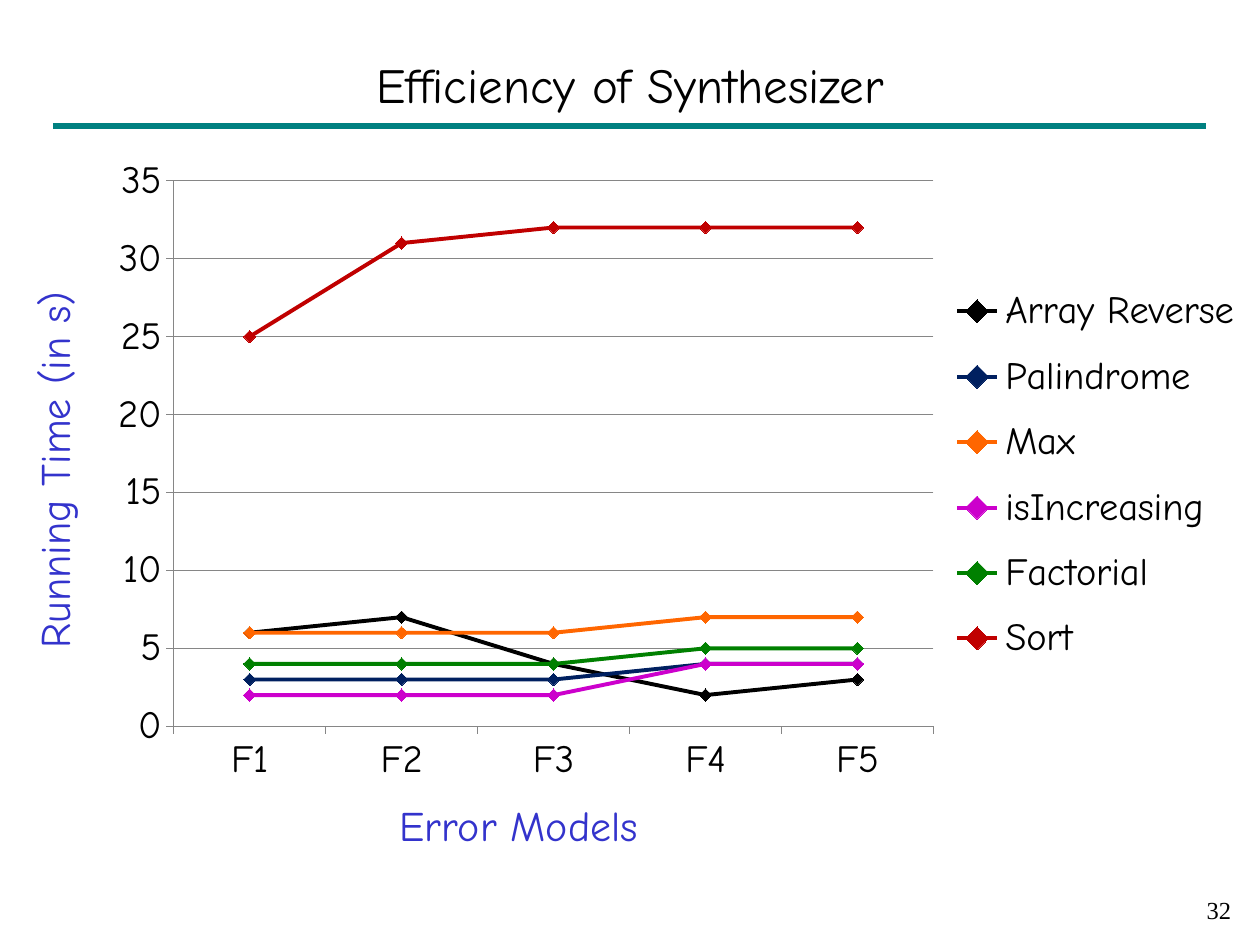
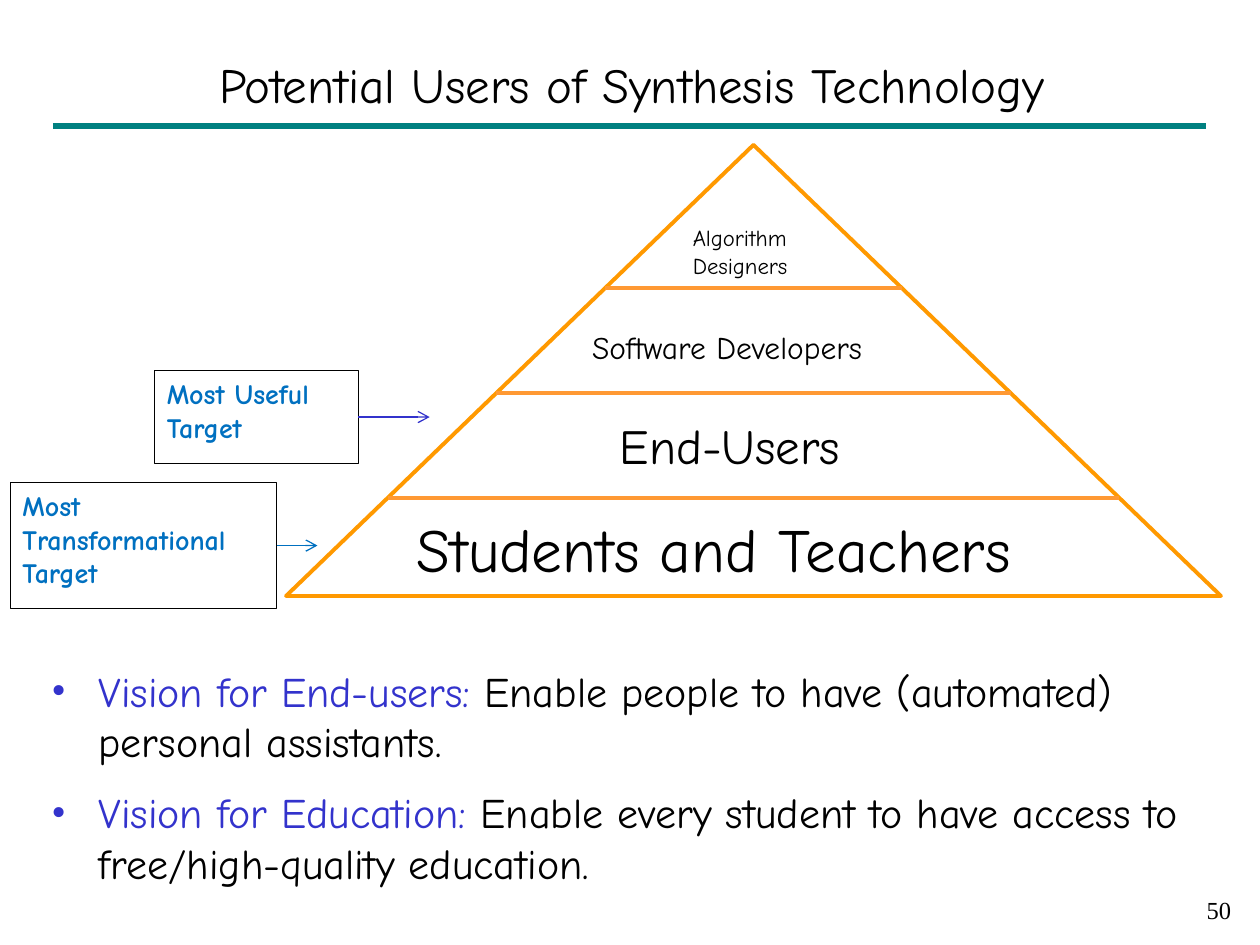
import dataclasses

import pptx
import pptx.chart.data
import pptx.dml.color
import pptx.enum.chart
import pptx.enum.shapes
import pptx.enum.text
import pptx.oxml
import pptx.oxml.ns
import pptx.util
import lxml.etree

COLUMNS, ROWS = 100, 75
CELL = pptx.util.Inches(0.1)
Pt = pptx.util.Pt
qn = pptx.oxml.ns.qn
SHAPE = pptx.enum.shapes.MSO_SHAPE
ALIGN = pptx.enum.text.PP_ALIGN
ANCHOR = pptx.enum.text.MSO_ANCHOR


@dataclasses.dataclass(frozen=True)
class Theme:
    font: str = "Comic Neue"
    number_font: str = "Times New Roman"
    ink: str = "000000"
    paper: str = "FFFFFF"
    band: str = "008080"
    accent: str = "3333CC"
    pyramid: str = "FF9900"
    divider: str = "FF9933"
    target: str = "0070C0"
    grid: str = "868686"
    title_size: int = 28
    body_size: int = 24
    tick_size: int = 22
    target_size: int = 16
    number_size: int = 14
    band_width: float = 4
    strong: float = 2.25
    thin: float = 0.75
    hairline: float = 0.5


THEME = Theme()

EFFICIENCY = {
    "title": "Efficiency of Synthesizer", "title_box": (7.5, 3.3, 85, 6.7), "number": "32",
    "box": (0, 11.5, 102.9, 59.4),
    "models": ["F1", "F2", "F3", "F4", "F5"],
    "times": [
        ("Array Reverse", "000000", (6, 7, 4, 2, 3)),
        ("Palindrome", "002060", (3, 3, 3, 4, 4)),
        ("Max", "FF6600", (6, 6, 6, 7, 7)),
        ("isIncreasing", "CC00CC", (2, 2, 2, 4, 4)),
        ("Factorial", "008000", (4, 4, 4, 5, 5)),
        ("Sort", "C00000", (25, 31, 32, 32, 32)),
    ],
    "model_axis": "Error Models",
    "time_axis": "Running Time (in s)",
}
PLOT_PERCENT = {"x": 13.4, "y": 4.8, "w": 58.6, "h": 72.9}
LEGEND_PERCENT = {"x": 72, "y": 16.4, "w": 25, "h": 55.4}
MODEL_AXIS_PERCENT = {"x": 30.2, "y": 86.3}
TIME_AXIS_PERCENT = {"x": 1.5, "y": 18.6}

USERS = {
    "title": "Potential Users of Synthesis Technology", "title_box": (3.9, 3.3, 92.5, 6.7),
    "number": "50",
    "pyramid": (22.7, 11.5, 74.2, 35.8),
    "levels": [
        (["Students and Teachers"], 35, (32.1, 40.1, 55.4, 5.8), {}),
        (["End-Users"], 28, (48.2, 32.5, 23.1, 7.1), {}),
        (["Algorithm", "Designers"], 13, (54, 17.3, 10.4, 6.5), {}),
        (["Software Developers"], 18, (46, 25.1, 27.2, 6.2),
         {"line_spacing": 1.15, "space_after": Pt(10)}),
    ],
    "divider_rows": [22.85, 31.2, 39.5],
    "targets": [
        ("Most Transformational Target", (0.8, 38.3, 21.15, 10), 25.2, THEME.target),
        ("Most Useful Target", (12.25, 29.4, 16.2, 7.4), 34.1, THEME.accent),
    ],
    "visions_box": (3.1, 52.3, 93, 19.2),
    "visions": [
        ("Vision for End-users: ", "Enable people to have (automated) personal assistants."),
        ("Vision for Education:",
         " Enable every student to have access to free/high-quality education."),
    ],
}


def rgb(color):
    return pptx.dml.color.RGBColor.from_string(color)


def cells(*lengths):
    return [round(length * CELL) for length in lengths]


def apply(target, values):
    for name, value in values.items():
        setattr(target, name, value)


def style_font(font, size, color=THEME.ink, name=THEME.font, bold=False):
    apply(font, {"size": Pt(size), "name": name, "bold": bold})
    font.color.rgb = rgb(color)


def style_line(line, color, width):
    line.color.rgb = rgb(color)
    line.width = Pt(width)


def write(frame, paragraphs, paragraph_format=None, anchor=ANCHOR.TOP):
    apply(frame, {"word_wrap": True, "vertical_anchor": anchor})
    for index, runs in enumerate(paragraphs):
        paragraph = frame.add_paragraph() if index else frame.paragraphs[0]
        apply(paragraph, {"alignment": ALIGN.LEFT, **(paragraph_format or {})})
        for text, font in runs:
            run = paragraph.add_run()
            run.text = text
            style_font(run.font, **font)


def add_text(slide, box, paragraphs, paragraph_format=None, anchor=ANCHOR.TOP):
    text = slide.shapes.add_textbox(*cells(*box))
    write(text.text_frame, paragraphs, paragraph_format, anchor)
    return text


def add_block(slide, kind, box, line_color, line_width):
    block = slide.shapes.add_shape(kind, *cells(*box))
    block.shadow.inherit = False
    block.fill.solid()
    block.fill.fore_color.rgb = rgb(THEME.paper)
    style_line(block.line, line_color, line_width)
    return block


def add_line(slide, start, end, color, width, source=None, arrow=False):
    line = slide.shapes.add_connector(
        pptx.enum.shapes.MSO_CONNECTOR.STRAIGHT, *cells(*start, *end))
    style_line(line.line, color, width)
    if source is not None:
        line.begin_connect(source, 3)
    shape_format = line.element.spPr
    if arrow:
        lxml.etree.SubElement(shape_format.find(qn("a:ln")), qn("a:tailEnd"), type="arrow")
    lxml.etree.SubElement(shape_format, qn("a:effectLst"))


def add_page(deck, content):
    slide = deck.slides.add_slide(deck.slide_layouts[6])
    add_line(slide, (4.2, 10), (95.7, 10), THEME.band, THEME.band_width)
    add_text(slide, content["title_box"], [[(content["title"], {"size": THEME.title_size})]],
             {"alignment": ALIGN.CENTER}, ANCHOR.MIDDLE)
    number_font = {"size": THEME.number_size, "name": THEME.number_font}
    add_text(slide, (77.9, 70.5, 20.8, 4.2), [[(content["number"], number_font)]],
             {"alignment": ALIGN.RIGHT})
    return slide


def place(part, index, percents, inner=False):
    for old in part.findall(qn("c:layout")):
        part.remove(old)
    layout = lxml.etree.Element(qn("c:layout"))
    manual = lxml.etree.SubElement(layout, qn("c:manualLayout"))
    target = {"layoutTarget": "inner"} if inner else {}
    shares = {name: round(percent / 100, 3) for name, percent in percents.items()}
    for name, value in {**target, "xMode": "edge", "yMode": "edge", **shares}.items():
        lxml.etree.SubElement(manual, qn("c:" + name), val=str(value))
    part.insert(index, layout)


def style_axis(axis, title, turn, title_percent):
    axis.major_tick_mark = pptx.enum.chart.XL_TICK_MARK.OUTSIDE
    axis.minor_tick_mark = pptx.enum.chart.XL_TICK_MARK.NONE
    style_font(axis.tick_labels.font, THEME.tick_size)
    style_line(axis.format.line, THEME.grid, THEME.thin)
    frame = axis.axis_title.text_frame
    run = frame.paragraphs[0].add_run()
    run.text = title
    style_font(run.font, THEME.body_size, THEME.accent)
    title_part = axis.axis_title.element
    title_part.find(".//" + qn("a:bodyPr")).set("rot", str(turn * 60000))
    place(title_part, 1, title_percent)


def build_efficiency(deck):
    slide = add_page(deck, EFFICIENCY)
    data = pptx.chart.data.CategoryChartData()
    data.categories = EFFICIENCY["models"]
    for problem, color, seconds in EFFICIENCY["times"]:
        data.add_series(problem, seconds)
    chart = slide.shapes.add_chart(pptx.enum.chart.XL_CHART_TYPE.LINE_MARKERS,
                                   *cells(*EFFICIENCY["box"]), data).chart
    apply(chart, {"has_title": False, "has_legend": True})
    style_font(chart.font, 10)
    chart.plots[0].vary_by_categories = False
    for series, (problem, color, seconds) in zip(chart.plots[0].series, EFFICIENCY["times"]):
        series.smooth = False
        style_line(series.format.line, color, THEME.strong)
        apply(series.marker, {"style": pptx.enum.chart.XL_MARKER_STYLE.DIAMOND, "size": 7})
        series.marker.format.fill.solid()
        series.marker.format.fill.fore_color.rgb = rgb(color)
        style_line(series.marker.format.line, color, THEME.thin)
    style_axis(chart.category_axis, EFFICIENCY["model_axis"], 0, MODEL_AXIS_PERCENT)
    style_axis(chart.value_axis, EFFICIENCY["time_axis"], -90, TIME_AXIS_PERCENT)
    apply(chart.value_axis, {"minimum_scale": 0, "maximum_scale": 35, "major_unit": 5})
    style_line(chart.value_axis.major_gridlines.format.line, THEME.grid, THEME.thin)
    apply(chart.legend, {"position": pptx.enum.chart.XL_LEGEND_POSITION.RIGHT,
                         "include_in_layout": False})
    style_font(chart.legend.font, THEME.tick_size)
    place(chart.element.find(".//" + qn("c:plotArea")), 0, PLOT_PERCENT, inner=True)
    place(chart.element.find(".//" + qn("c:legend")), 1, LEGEND_PERCENT)


def build_users(deck):
    slide = add_page(deck, USERS)
    left, top, width, height = USERS["pyramid"]
    add_block(slide, SHAPE.ISOSCELES_TRIANGLE, USERS["pyramid"], THEME.pyramid, THEME.strong)
    for lines, size, box, spacing in USERS["levels"]:
        level = add_block(slide, SHAPE.RECTANGLE, box, THEME.paper, THEME.hairline)
        write(level.text_frame, [[(line, {"size": size})] for line in lines], spacing)

    middle = left + width / 2
    for row in USERS["divider_rows"]:
        reach = (row - top) / height * width / 2
        add_line(slide, (middle - reach, row), (middle + reach, row),
                 THEME.divider, THEME.strong)

    target_font = {"size": THEME.target_size, "color": THEME.target, "bold": True}
    for label, box, arrow_end, arrow_color in USERS["targets"]:
        target = add_block(slide, SHAPE.RECTANGLE, box, THEME.ink, THEME.hairline)
        write(target.text_frame, [[(label, target_font)]])
        row = box[1] + box[3] / 2
        add_line(slide, (box[0] + box[2], row), (arrow_end, row), arrow_color, THEME.thin,
                 source=target, arrow=True)

    visions = add_text(
        slide, USERS["visions_box"],
        [[(lead, {"size": THEME.body_size, "color": THEME.accent}),
          (goal, {"size": THEME.body_size})] for lead, goal in USERS["visions"]],
        {"space_before": Pt(THEME.body_size / 2)})
    indent = cells(3.75)[0]
    for paragraph in visions.text_frame.paragraphs:
        properties = paragraph._p.get_or_add_pPr()
        properties.set("marL", str(indent))
        properties.set("indent", str(-indent))
        lxml.etree.SubElement(properties, qn("a:buFont"), typeface=THEME.number_font)
        lxml.etree.SubElement(properties, qn("a:buChar"), char="•")


def main():
    deck = pptx.Presentation()
    deck.slide_width, deck.slide_height = COLUMNS * CELL, ROWS * CELL
    build_efficiency(deck)
    build_users(deck)
    deck.save("out.pptx")


if __name__ == "__main__":
    main()
